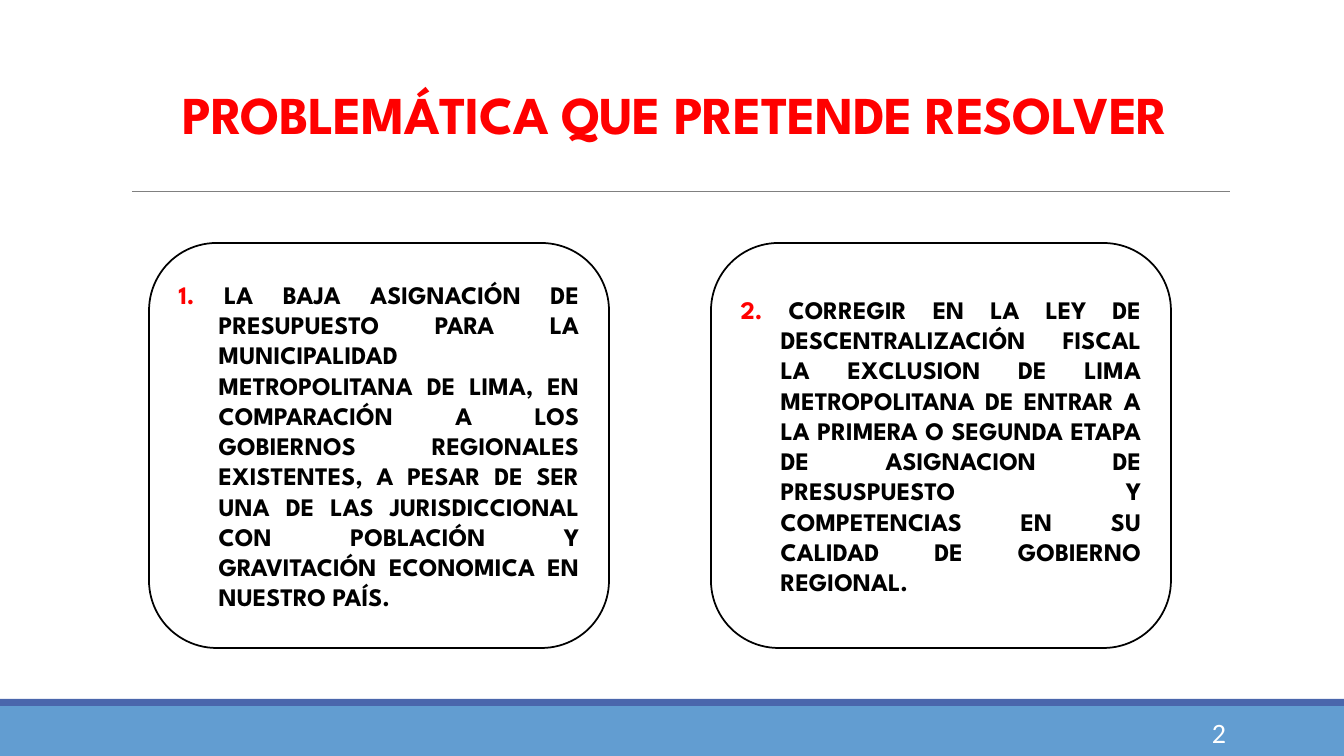
from dataclasses import dataclass

from lxml.etree import SubElement
from pptx import Presentation
from pptx.dml.color import RGBColor
from pptx.enum.shapes import MSO_CONNECTOR, MSO_SHAPE
from pptx.enum.text import MSO_ANCHOR, MSO_AUTO_SIZE, PP_ALIGN
from pptx.oxml.ns import qn
from pptx.util import Pt


@dataclass(frozen=True)
class Theme:
    red: RGBColor = RGBColor(0xFF, 0x00, 0x00)
    black: RGBColor = RGBColor(0x00, 0x00, 0x00)
    white: RGBColor = RGBColor(0xFF, 0xFF, 0xFF)
    rule: RGBColor = RGBColor(0x80, 0x80, 0x80)
    band: RGBColor = RGBColor(0x62, 0x9D, 0xD1)
    stripe: RGBColor = RGBColor(0x4A, 0x66, 0xAC)
    heading_font: str = "League Spartan"
    number_font: str = "Calibri"
    title_size: int = 38
    body_size: int = 18
    number_size: int = 20


THEME = Theme()
PX_PER_INCH = 100.8
SLIDE_W, SLIDE_H = 1344, 756
PROBLEMS = [
    "LA BAJA ASIGNACIÓN DE PRESUPUESTO PARA LA MUNICIPALIDAD METROPOLITANA DE LIMA, "
    "EN COMPARACIÓN A LOS GOBIERNOS REGIONALES EXISTENTES, A PESAR DE SER UNA DE LAS "
    "JURISDICCIONAL CON POBLACIÓN Y GRAVITACIÓN ECONOMICA EN NUESTRO PAÍS.",
    "CORREGIR EN LA LEY DE DESCENTRALIZACIÓN FISCAL LA EXCLUSION DE LIMA METROPOLITANA "
    "DE ENTRAR A LA PRIMERA O SEGUNDA ETAPA DE ASIGNACION DE PRESUSPUESTO Y COMPETENCIAS "
    "EN SU CALIDAD DE GOBIERNO REGIONAL.",
]


def px(n):
    return round(n * 914400 / PX_PER_INCH)


def style_run(r, font, size, color, bold=False):
    r.font.name = font
    r.font.size = Pt(size)
    r.font.color.rgb = color
    r.font.bold = bold


def add_box(s, shape, x, y, w, h, fill):
    sp = s.shapes.add_shape(shape, px(x), px(y), px(w), px(h))
    sp.shadow.inherit = False
    sp.fill.solid()
    sp.fill.fore_color.rgb = fill
    sp.line.fill.background()
    return sp


def add_footer(s, x, y, w, h, number):
    stripe_h = 7
    add_box(s, MSO_SHAPE.RECTANGLE, x, y + stripe_h, w, h - stripe_h, THEME.band)
    add_box(s, MSO_SHAPE.RECTANGLE, x, y, w, stripe_h, THEME.stripe)
    sp = s.shapes.add_textbox(px(x + w - 252), px(y + 13), px(144), px(40))
    tf = sp.text_frame
    tf.word_wrap = True
    tf.vertical_anchor = MSO_ANCHOR.MIDDLE
    tf.text = str(number)
    p = tf.paragraphs[0]
    p.alignment = PP_ALIGN.RIGHT
    style_run(p.runs[0], THEME.number_font, THEME.number_size, THEME.white)


def add_title(s, x, y, w, h, text):
    sp = s.shapes.title
    sp.left, sp.top, sp.width, sp.height = px(x), px(y), px(w), px(h)
    tf = sp.text_frame
    tf.word_wrap = True
    tf.auto_size = MSO_AUTO_SIZE.NONE
    tf.vertical_anchor = MSO_ANCHOR.BOTTOM
    tf.text = text
    p = tf.paragraphs[0]
    p.alignment = PP_ALIGN.CENTER
    p.line_spacing = 0.85
    r = p.runs[0]
    style_run(r, THEME.heading_font, THEME.title_size, THEME.red, True)
    r.font._element.set("spc", "-50")
    rule_y = y + h + 41
    line = s.shapes.add_connector(
        MSO_CONNECTOR.STRAIGHT, px(x + 11), px(rule_y), px(x + w), px(rule_y))
    line.line.color.rgb = THEME.rule
    line.line.width = Pt(0.5)
    SubElement(line._element.spPr, qn("a:effectLst"))


def add_problem(s, x, y, w, h, number, text):
    sp = add_box(s, MSO_SHAPE.ROUNDED_RECTANGLE, x, y, w, h, THEME.white)
    sp.line.color.rgb = THEME.black
    sp.line.width = Pt(1.25)
    tf = sp.text_frame
    tf.word_wrap = True
    tf.vertical_anchor = MSO_ANCHOR.MIDDLE
    p = tf.paragraphs[0]
    p.alignment = PP_ALIGN.JUSTIFY
    indent = px(40)
    pPr = p._p.get_or_add_pPr()
    pPr.set("marL", str(indent))
    pPr.set("indent", str(-indent))
    for part, color in ((f"{number}.", THEME.red), (f" {text}", THEME.black)):
        r = p.add_run()
        r.text = part
        style_run(r, THEME.heading_font, THEME.body_size, color, True)


def add_problems(s, x, y, w, h, problems):
    card_w = 460
    step = (w - card_w) // (len(problems) - 1)
    for i, text in enumerate(problems):
        add_problem(s, x + i * step, y, card_w, h, i + 1, text)


def main():
    prs = Presentation()
    prs.slide_width, prs.slide_height = px(SLIDE_W), px(SLIDE_H)
    s = prs.slides.add_slide(prs.slide_layouts.get_by_name("Title Only"))
    add_footer(s, 0, 699, SLIDE_W, SLIDE_H - 699, 2)
    add_title(s, 121, 31, 1109, 119, "PROBLEMÁTICA QUE PRETENDE RESOLVER")
    add_problems(s, 149, 243, 1022, 405, PROBLEMS)
    prs.save("out.pptx")


if __name__ == "__main__":
    main()
